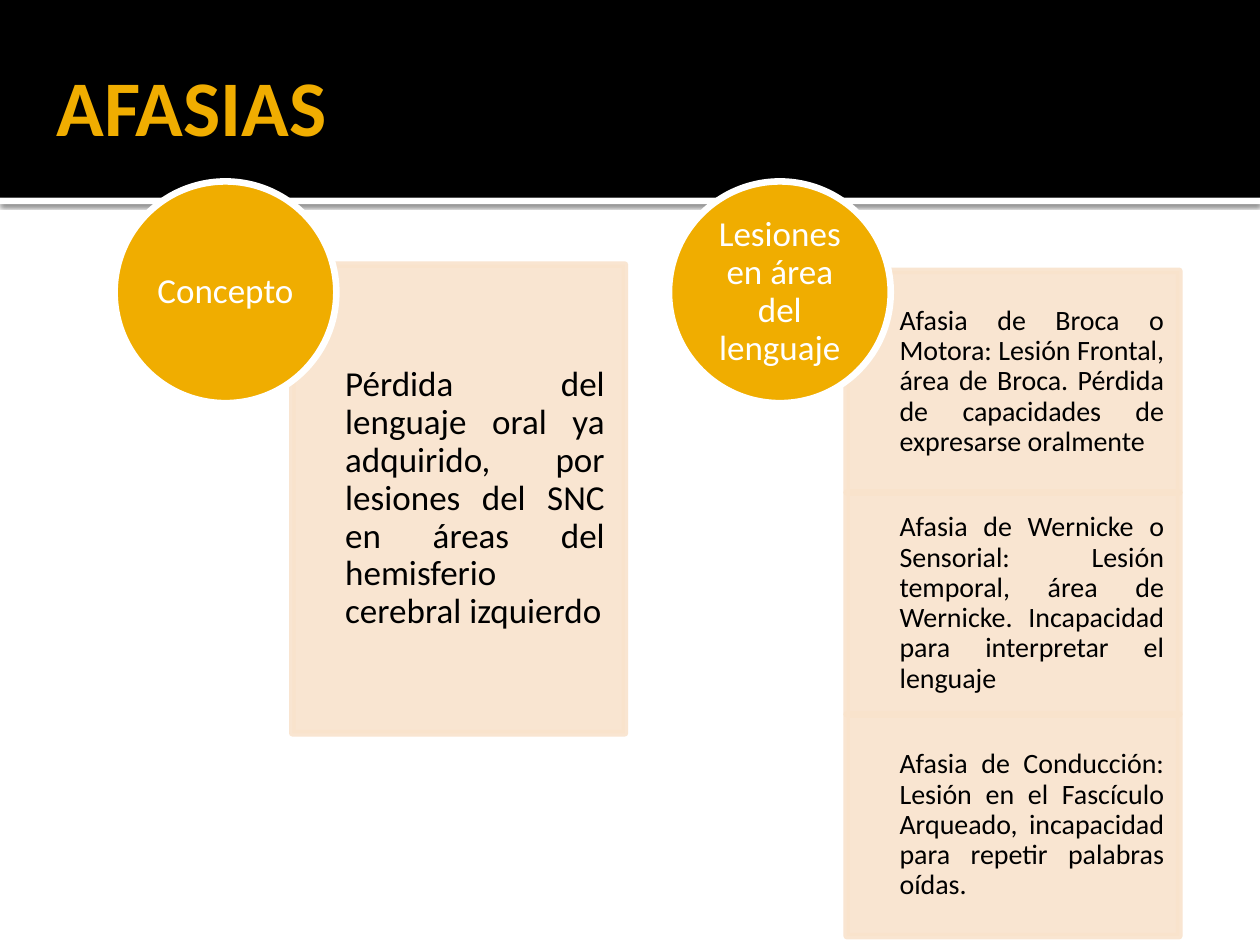
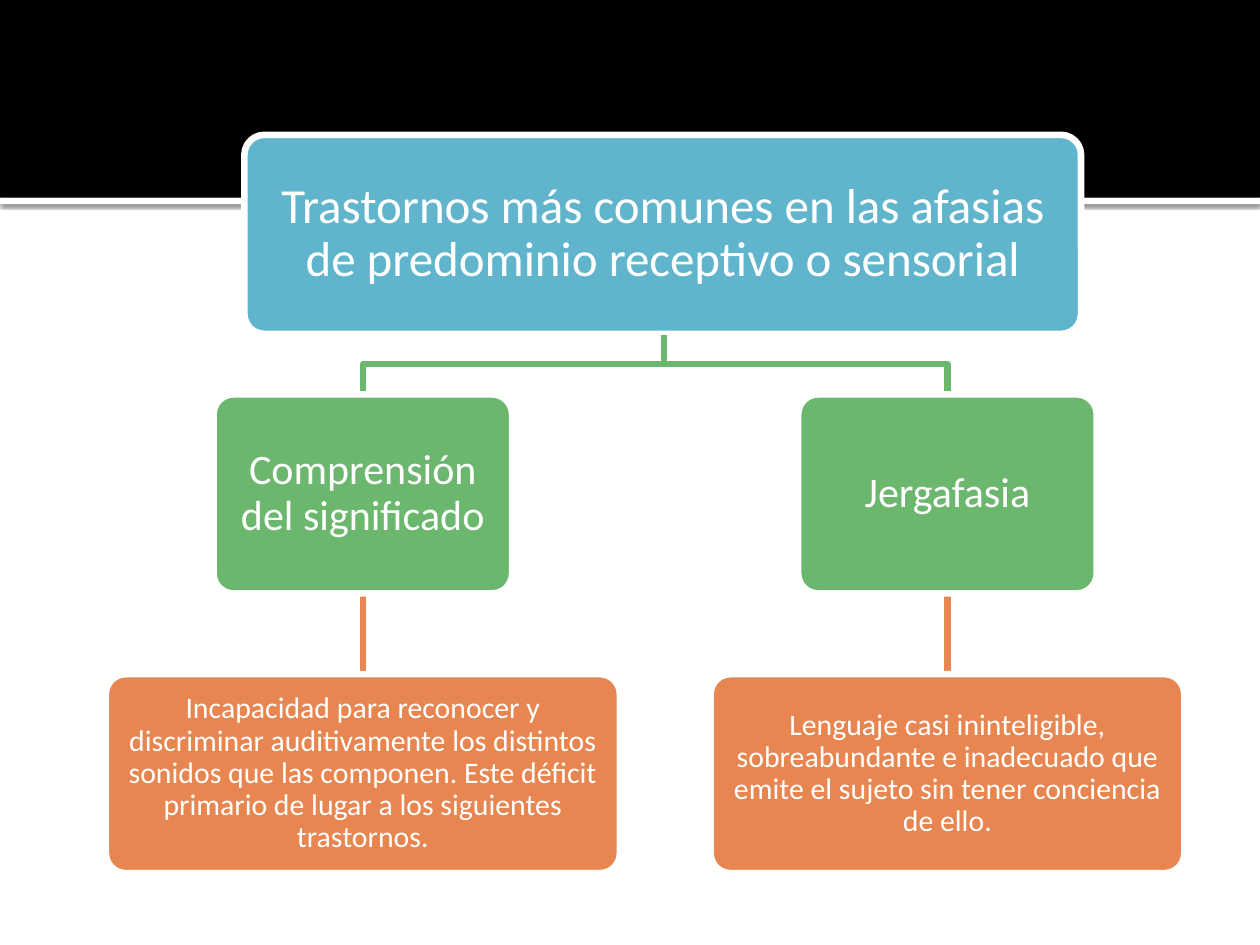
from lxml import etree
from pptx import Presentation, util as u
from pptx.dml.color import RGBColor
from pptx.enum import shapes, text
from pptx.oxml.ns import qn

PX = 9144  # EMU per px, 100 px to the inch
FONT = "Calibri"
BLACK, WHITE, GOLD, CREAM = "000000", "FFFFFF", "F0AD00", "F9E3CC"
BLUE, GREEN, ORANGE = "60B5CC", "6BB76D", "E88651"
EDGE = 3.78
KIND = shapes.MSO_SHAPE
ALIGN = text.PP_ALIGN


def px(n):
    return u.Emu(round(n * PX))


def rgb(code):
    return RGBColor.from_string(code)


def sub(node, tag, **attrs):
    return etree.SubElement(node, qn(tag), {k: str(v) for k, v in attrs.items()})


def write(shape, words, size=20, color=WHITE, bold=False, align=ALIGN.CENTER,
          pad=(0, 0, 0, 0), lead=0.9):
    """Set a shape's text; pad is left, top, right, bottom."""
    frame = shape.text_frame
    frame.word_wrap = True
    frame.vertical_anchor = text.MSO_ANCHOR.MIDDLE
    (frame.margin_left, frame.margin_top,
     frame.margin_right, frame.margin_bottom) = map(px, pad)
    para = frame.paragraphs[0]
    para.alignment, para.line_spacing = align, lead
    run = para.add_run()
    run.text = words
    run.font.name, run.font.size, run.font.bold = FONT, u.Pt(size), bold
    run.font.color.rgb = rgb(color)


class Deck:
    def __init__(self):
        self.prs = Presentation()
        self.prs.slide_width, self.prs.slide_height = px(1000), px(750)
        self.slide = None

    def page(self):
        """Start a slide with the black band and its shaded white rule."""
        self.slide = self.prs.slides.add_slide(self.prs.slide_layouts[6])
        rule = self.box(KIND.RECTANGLE, 0, 157, 1000, 5, WHITE)
        effects = rule._element.spPr.find(qn("a:effectLst"))
        shade = sub(effects, "a:outerShdw", blurRad=u.Pt(2.5), dist=u.Pt(0.8),
                    dir=5400000, algn="tl", rotWithShape=0)
        sub(sub(shade, "a:srgbClr", val=BLACK), "a:alpha", val=60000)
        self.box(KIND.RECTANGLE, 0, 0, 1000, 157, BLACK)

    def title(self, words):
        area = self.slide.shapes.add_textbox(px(35), px(21), px(900), px(125))
        write(area, words, size=45, color=GOLD, bold=True, align=ALIGN.LEFT,
              pad=(10, 5, 5, 5), lead=1.0)

    def box(self, kind, x, y, w, h, fill, edge=None, alpha=None):
        shape = self.slide.shapes.add_shape(kind, px(x), px(y), px(w), px(h))
        shape.shadow.inherit = False
        shape.fill.solid()
        shape.fill.fore_color.rgb = rgb(fill)
        if edge:
            shape.line.color.rgb = rgb(edge)
            shape.line.width = u.Pt(EDGE)
        else:
            shape.line.fill.background()
        if alpha:
            for tint in shape._element.spPr.iter(qn("a:srgbClr")):
                sub(tint, "a:alpha", val=alpha * 1000)
        return shape

    def panel(self, x, y, h, words, size, pad):
        shape = self.box(KIND.RECTANGLE, x, y, 264, h, CREAM, CREAM, alpha=90)
        write(shape, words, size=size, color=BLACK, align=ALIGN.JUSTIFY,
              pad=(42, pad, pad, pad))

    def disc(self, x, words):
        write(self.box(KIND.OVAL, x, 144, 176, 176, GOLD, WHITE), words)

    def card(self, x, y, w, fill, words, size, pad):
        shape = self.box(KIND.ROUNDED_RECTANGLE, x, y, w, 158, fill, WHITE)
        shape.adjustments[0] = 0.1
        write(shape, words, size=size, pad=(pad,) * 4)
        return shape

    def bend(self, points, color):
        pen = self.slide.shapes.build_freeform(*points[0], scale=PX)
        pen.add_line_segments(points[1:], close=False)
        shape = pen.convert_to_shape()
        shape.shadow.inherit = False
        shape.fill.background()
        shape.line.color.rgb = rgb(color)
        shape.line.width = u.Pt(EDGE)

    def wire(self, x, top, end, color):
        line = self.slide.shapes.add_connector(
            shapes.MSO_CONNECTOR.STRAIGHT, px(x), px(top), px(x), px(end))
        line.line.color.rgb = rgb(color)
        line.line.width = u.Pt(EDGE)
        sub(line._element.spPr, "a:effectLst")
        return line


def concept(deck):
    deck.page()
    # Concept
    left, right, shift = 91, 531, 141
    deck.panel(left + shift, 210, 372,
               "Pérdida del lenguaje oral ya adquirido, por lesiones del SNC "
               "en áreas del hemisferio cerebral izquierdo", 20, 16)
    deck.disc(left, "Concepto")
    # Lesions by area
    lesions = (
        "Afasia de Broca o Motora: Lesión Frontal, área de Broca. "
        "Pérdida de capacidades de expresarse oralmente",
        "Afasia de Wernicke o Sensorial: Lesión temporal, área de Wernicke. "
        "Incapacidad para interpretar el lenguaje",
        "Afasia de Conducción: Lesión en el Fascículo Arqueado, "
        "incapacidad para repetir palabras oídas.",
    )
    for i, words in enumerate(lesions):
        deck.panel(right + shift, 215 + 176 * i, 176, words, 16, 12)
    deck.disc(right, "Lesiones en área del lenguaje")
    deck.title("AFASIAS")


def tree(deck):
    deck.page()
    # Root
    root = 527
    deck.card(194, 107, 664, BLUE,
              "Trastornos más comunes en las afasias de predominio receptivo "
              "o sensorial", 28, 12)
    # Branches: middle, name, width of the leaf, leaf text
    branches = (
        (288, "Comprensión del significado", 408,
         "Incapacidad para reconocer y discriminar auditivamente los distintos "
         "sonidos que las componen. Este déficit primario de lugar a los "
         "siguientes trastornos."),
        (752, "Jergafasia", 376,
         "Lenguaje casi ininteligible, sobreabundante e inadecuado que emite "
         "el sujeto sin tener conciencia de ello."),
    )
    for mid, name, wide, words in branches:
        deck.bend([(root, 266), (root, 289), (mid, 289), (mid, 313)], GREEN)
        # The wire lies behind both cards, so it is drawn first
        wire = deck.wire(mid, 471, 535, ORANGE)
        branch = deck.card(mid - 118.5, 313, 237, GREEN, name, 24, 10)
        leaf = deck.card(mid - wide / 2, 535, wide, ORANGE, words, 17, 7)
        wire.begin_connect(branch, 2)
        wire.end_connect(leaf, 0)


def main():
    deck = Deck()
    concept(deck)
    tree(deck)
    deck.prs.save("out.pptx")


if __name__ == "__main__":
    main()
